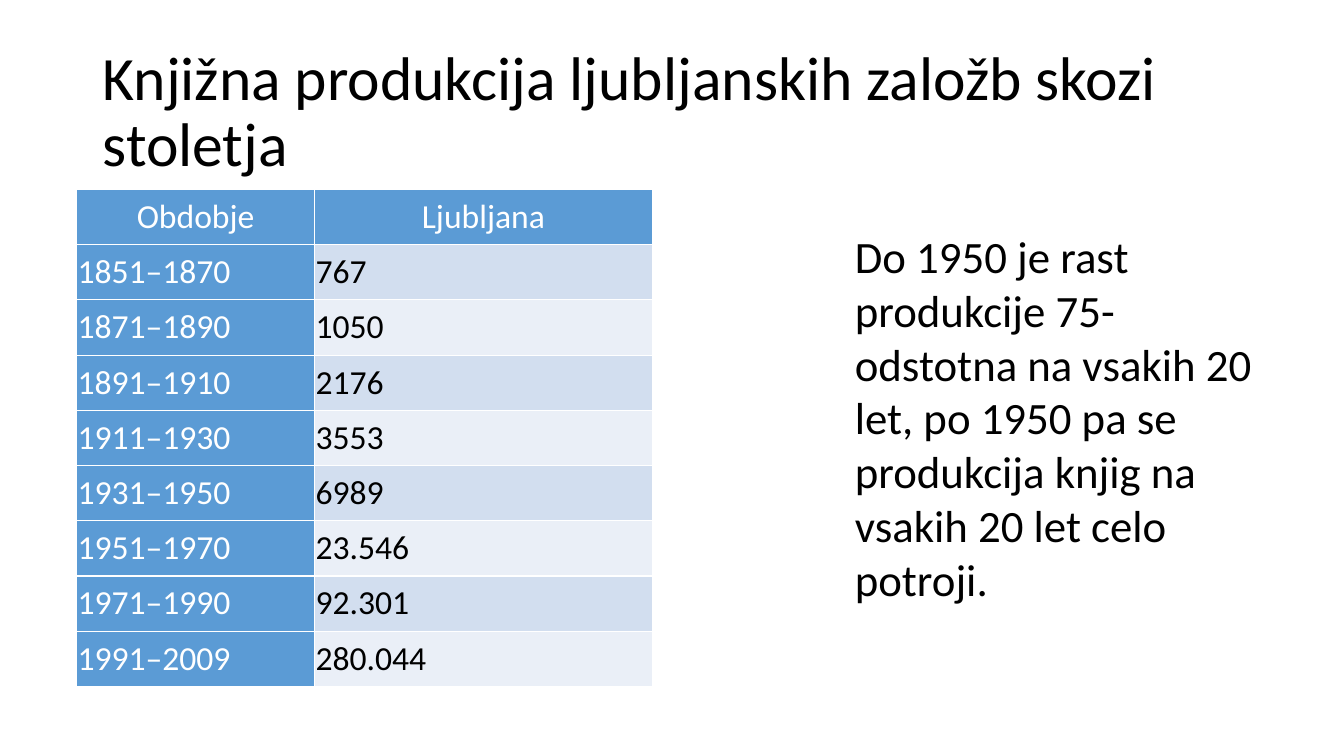
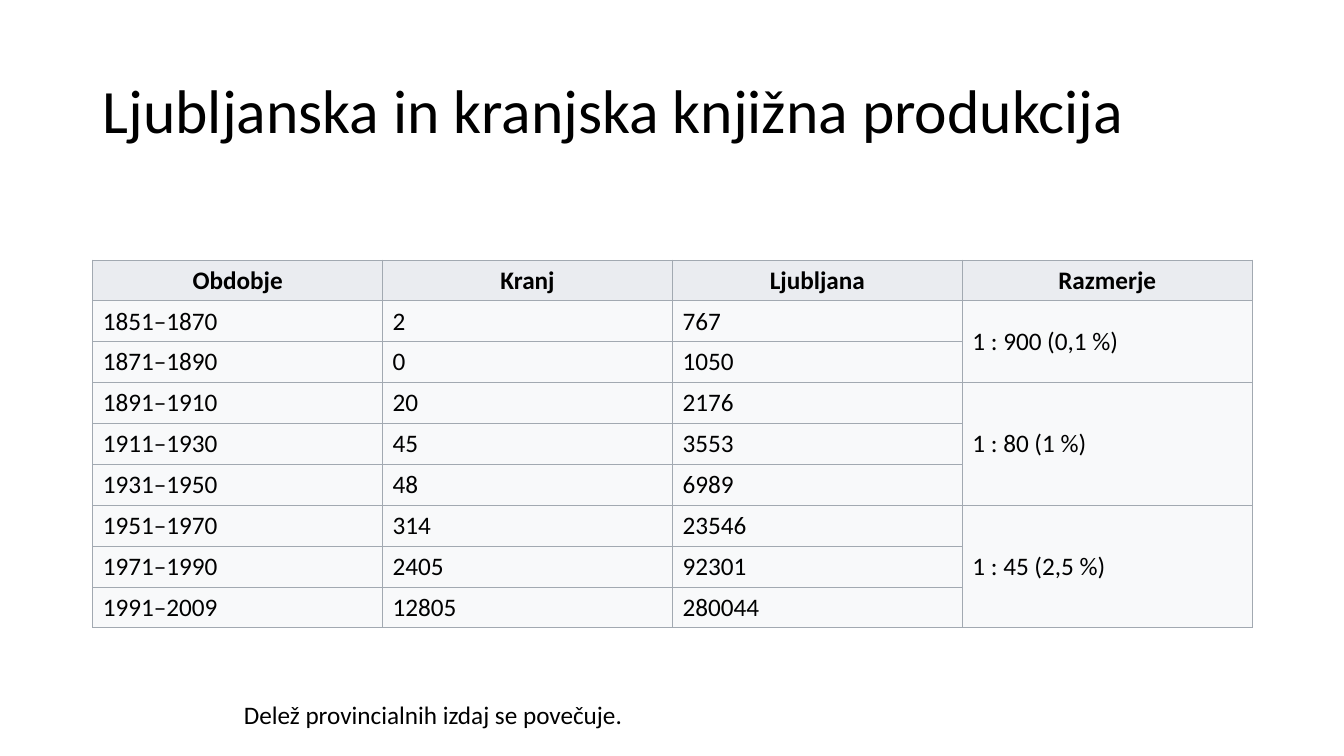
from pptx import Presentation
from pptx.dml.color import RGBColor
from pptx.enum.text import MSO_ANCHOR, PP_ALIGN
from pptx.oxml.ns import qn
from pptx.util import Inches, Pt
from lxml.etree import SubElement

FONT = "Calibri"
BLACK = RGBColor(0x00, 0x00, 0x00)
WHITE = RGBColor(0xFF, 0xFF, 0xFF)
BLUE = RGBColor(0x5B, 0x9B, 0xD5)
BLUE_BANDS = (RGBColor(0xD2, 0xDE, 0xEF), RGBColor(0xEA, 0xEF, 0xF7))
GREY_HEADER = RGBColor(0xEA, 0xEC, 0xF0)
GREY_BODY = RGBColor(0xF8, 0xF9, 0xFA)
GREY_LINE = RGBColor(0xA2, 0xA9, 0xB1)

TITLE_BOX = (0.92, 0.4, 11.5, 1.45)

# Period, books from Kranj, books from Ljubljana
PRODUCTION = [
    ("1851–1870", 2, 767),
    ("1871–1890", 0, 1050),
    ("1891–1910", 20, 2176),
    ("1911–1930", 45, 3553),
    ("1931–1950", 48, 6989),
    ("1951–1970", 314, 23546),
    ("1971–1990", 2405, 92301),
    ("1991–2009", 12805, 280044),
]
# First row, last row, ratio of Kranj to Ljubljana
RATIOS = [(1, 2, "1 : 900 (0,1 %)"), (3, 5, "1 : 80 (1 %)"), (6, 8, "1 : 45 (2,5 %)")]


def add_run(paragraph, text, size, color=BLACK, bold=False):
    run = paragraph.add_run()
    run.text = text
    run.font.name = FONT
    run.font.size = Pt(size)
    run.font.bold = bold
    run.font.color.rgb = color


def add_text(slide, box, text, size, wrap=True):
    shape = slide.shapes.add_textbox(*map(Inches, box))
    shape.text_frame.word_wrap = wrap
    add_run(shape.text_frame.paragraphs[0], text, size)
    return shape.text_frame


def add_title(slide, text):
    frame = add_text(slide, TITLE_BOX, text, 44)
    frame.vertical_anchor = MSO_ANCHOR.MIDDLE
    frame.paragraphs[0].line_spacing = 0.9


def set_borders(cell, color, width):
    properties = cell._tc.get_or_add_tcPr()
    for side in ("a:lnL", "a:lnR", "a:lnT", "a:lnB"):
        line = SubElement(properties, qn(side), w=str(Pt(width)))
        fill = SubElement(line, qn("a:solidFill"))
        SubElement(fill, qn("a:srgbClr"), val=str(color))


def add_table(slide, box, rows, column_widths, line, margin=None):
    """Add a table of (text, size, color, bold, fill) cells; the first row is centred."""
    frame = slide.shapes.add_table(len(rows), len(column_widths), *map(Inches, box))
    table = frame.table
    table.first_row = table.horz_banding = False
    for column, width in zip(table.columns, column_widths):
        column.width = Inches(width)
    for row_index, row in enumerate(rows):
        table.rows[row_index].height = Inches(box[3] / len(rows))
        for column_index, (text, size, color, bold, fill) in enumerate(row):
            cell = table.cell(row_index, column_index)
            set_borders(cell, *line)
            cell.fill.solid()
            cell.fill.fore_color.rgb = fill
            cell.vertical_anchor = MSO_ANCHOR.MIDDLE
            if margin is not None:
                cell.margin_left = cell.margin_right = Inches(margin)
                cell.margin_top = cell.margin_bottom = Inches(margin)
            paragraph = cell.text_frame.paragraphs[0]
            if row_index == 0:
                paragraph.alignment = PP_ALIGN.CENTER
            if text:
                add_run(paragraph, text, size, color, bold)
    return table


def group_thousands(number):
    """Dot the thousands of numbers with five or more digits."""
    return f"{number:,}".replace(",", ".") if number >= 10000 else str(number)


def add_ljubljana_table(slide, box):
    rows = [[(text, 24, WHITE, False, BLUE) for text in ("Obdobje", "Ljubljana")]]
    for index, (period, _, ljubljana) in enumerate(PRODUCTION):
        rows.append([
            (period, 24, WHITE, False, BLUE),
            (group_thousands(ljubljana), 24, BLACK, False, BLUE_BANDS[index % 2]),
        ])
    add_table(slide, box, rows, (2.36, 3.35), (WHITE, 1), margin=0.01)


def add_comparison_table(slide, box):
    headings = ("Obdobje", "Kranj", "Ljubljana", "Razmerje")
    ratio_texts = {first: text for first, _, text in RATIOS}
    rows = [[(text, 18, BLACK, True, GREY_HEADER) for text in headings]]
    for index, record in enumerate(PRODUCTION, start=1):
        texts = [*map(str, record), ratio_texts.get(index, "")]
        rows.append([(text, 18, BLACK, False, GREY_BODY) for text in texts])
    widths = [box[2] / len(headings)] * len(headings)
    table = add_table(slide, box, rows, widths, (GREY_LINE, 0.75))
    for first, last, _ in RATIOS:
        table.cell(first, 3).merge(table.cell(last, 3))


def build_ljubljana_slide(slide):
    add_title(slide, "Knjižna produkcija ljubljanskih založb skozi stoletja")
    add_ljubljana_table(slide, (0.76, 1.88, 5.71, 4.93))
    add_text(
        slide, (8.38, 2.22, 4.39, 3.87),
        "Do 1950 je rast produkcije 75-odstotna na vsakih 20 let, "
        "po 1950 pa se produkcija knjig na vsakih 20 let celo potroji.", 32)


def build_comparison_slide(slide):
    add_title(slide, "Ljubljanska in kranjska knjižna produkcija")
    add_comparison_table(slide, (0.92, 2.58, 11.5, 3.65))
    add_text(slide, (2.32, 6.89, 4.06, 0.4),
             "Delež provincialnih izdaj se povečuje.", 18, wrap=False)


def main():
    presentation = Presentation()
    presentation.slide_width = Inches(13.33)
    presentation.slide_height = Inches(7.5)
    blank_layout = presentation.slide_layouts[6]
    for build_slide in (build_ljubljana_slide, build_comparison_slide):
        build_slide(presentation.slides.add_slide(blank_layout))
    presentation.save("out.pptx")


if __name__ == "__main__":
    main()
